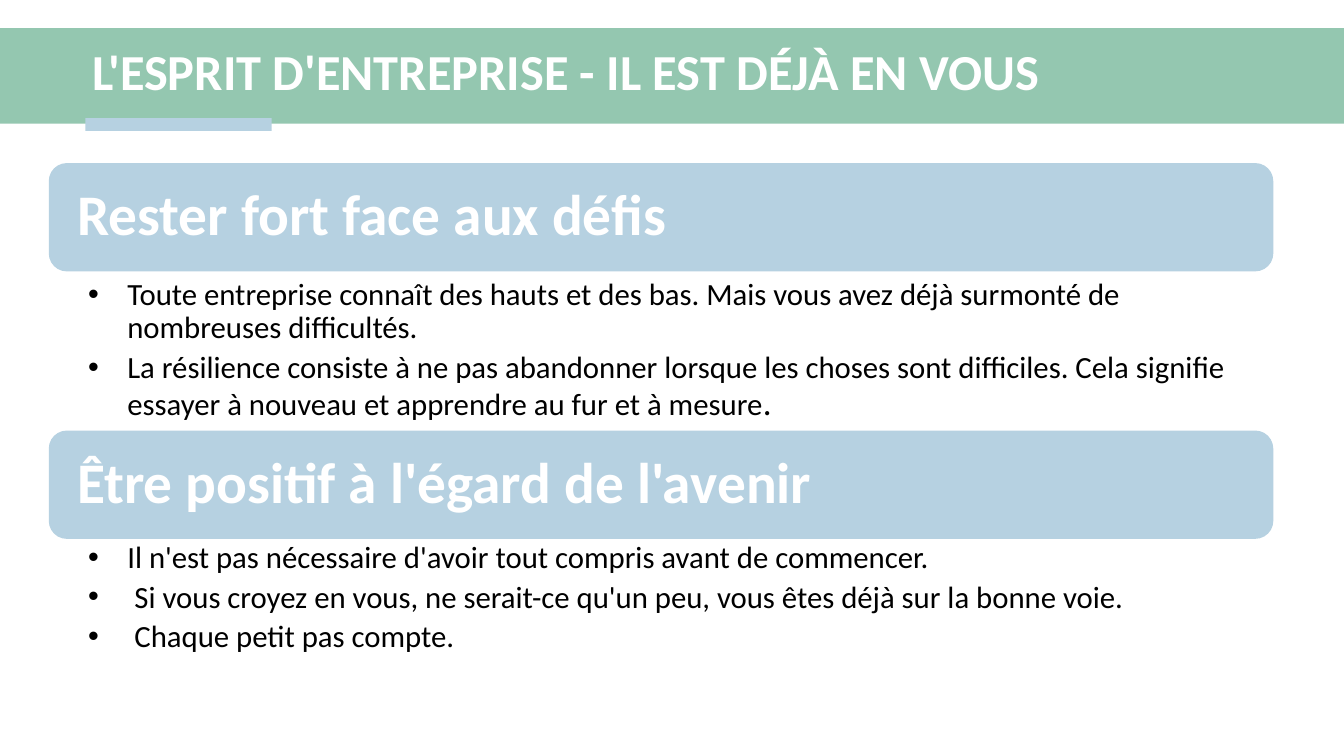
from dataclasses import dataclass

from lxml import etree
from pptx import Presentation
from pptx.dml.color import RGBColor
from pptx.enum.shapes import MSO_SHAPE
from pptx.enum.text import MSO_ANCHOR, MSO_AUTO_SIZE, PP_ALIGN
from pptx.oxml.ns import qn
from pptx.util import Cm, Pt

RECTANGLE = MSO_SHAPE.RECTANGLE
ROUNDED = MSO_SHAPE.ROUNDED_RECTANGLE
MIDDLE = MSO_ANCHOR.MIDDLE
LEFT = PP_ALIGN.LEFT
NO_AUTOFIT = MSO_AUTO_SIZE.NONE


@dataclass(frozen=True)
class Theme:
    font: str = "Calibri"
    green: RGBColor = RGBColor(0x94, 0xC7, 0xB0)
    blue: RGBColor = RGBColor(0xB6, 0xD1, 0xE1)
    white: RGBColor = RGBColor(0xFF, 0xFF, 0xFF)
    black: RGBColor = RGBColor(0, 0, 0)
    title: Pt = Pt(36)
    heading: Pt = Pt(41)
    body: Pt = Pt(22)
    full_stop: Pt = Pt(25)


theme = Theme()


def add_block(kind, left, top, width, height, color):
    block = page.shapes.add_shape(kind, Cm(left), Cm(top), Cm(width), Cm(height))
    block.shadow.inherit = False
    block.fill.solid()
    block.fill.fore_color.rgb = color
    block.line.fill.background()
    return block


def format_paragraph(paragraph, size, color, bold=False):
    paragraph.alignment = LEFT
    paragraph.line_spacing = 0.9
    paragraph.font.name = theme.font
    paragraph.font.size = size
    paragraph.font.bold = bold
    paragraph.font.color.rgb = color


deck = Presentation()
deck.slide_width, deck.slide_height = Cm(33.87), Cm(19.05)
page = deck.slides.add_slide(deck.slide_layouts[5])

# Title band with its accent bar
add_block(RECTANGLE, 0, 0.71, 33.87, 2.41, theme.green)
add_block(RECTANGLE, 2.15, 2.98, 4.7, 0.32, theme.blue)

# Title, brought in front of the band
title = page.shapes.title
title.element.getparent().append(title.element)
title.left, title.top, title.width, title.height = Cm(2.08), Cm(0.86), Cm(30.3), Cm(2)
title.text_frame.text = "L'ESPRIT D'ENTREPRISE - IL EST DÉJÀ EN VOUS"
title.text_frame.auto_size = NO_AUTOFIT
title.text_frame.vertical_anchor = MIDDLE
format_paragraph(title.text_frame.paragraphs[0], theme.title, theme.white, bold=True)

# Sections: heading, heading top, body top, body height, (text, indent) items
sections = [
    ("Rester fort face aux défis", 4.11, 6.96, 3.89, [
        ("Toute entreprise connaît des hauts et des bas. Mais vous avez déjà "
         "surmonté de nombreuses difficultés.", 0.99),
        ("La résilience consiste à ne pas abandonner lorsque les choses sont "
         "difficiles. Cela signifie essayer à nouveau et apprendre au fur et à mesure", 0.99),
    ]),
    ("Être positif à l'égard de l'avenir", 10.85, 13.59, 3.12, [
        ("Il n'est pas nécessaire d'avoir tout compris avant de commencer.", 0.99),
        ("Si vous croyez en vous, ne serait-ce qu'un peu, vous êtes déjà sur la bonne voie.", 1.17),
        ("Chaque petit pas compte.", 1.17),
    ]),
]
section_left, section_width = 1.23, 30.86
last_paragraphs = []

for heading, heading_top, body_top, body_height, items in sections:
    # Heading bar
    bar = add_block(ROUNDED, section_left, heading_top, section_width, 2.73, theme.blue)
    bar.text_frame.text = heading
    bar.text_frame.margin_left = Cm(0.58)
    bar.text_frame.vertical_anchor = MIDDLE
    format_paragraph(bar.text_frame.paragraphs[0], theme.heading, theme.white, bold=True)

    # Bulleted body
    box = page.shapes.add_textbox(Cm(section_left), Cm(body_top), Cm(section_width), Cm(body_height))
    frame = box.text_frame
    frame.word_wrap = True
    frame.margin_left, frame.margin_right = Cm(0.99), Cm(0.43)
    frame.margin_top = frame.margin_bottom = Cm(0.07)
    for index, (text, indent) in enumerate(items):
        paragraph = frame.paragraphs[0] if index == 0 else frame.add_paragraph()
        paragraph.text = text
        properties = paragraph._p.get_or_add_pPr()
        properties.set("marL", str(Cm(indent)))
        properties.set("indent", str(-Cm(indent)))
        etree.SubElement(properties, qn("a:buFont"), typeface="Arial")
        etree.SubElement(properties, qn("a:buChar"), char="•")
        paragraph.space_after = Pt(4.4)
        format_paragraph(paragraph, theme.body, theme.black)
    last_paragraphs.append(paragraph)

# Larger full stop closing the first section
span = last_paragraphs[0].add_run()
span.text = "."
span.font.size = theme.full_stop

deck.save("out.pptx")
